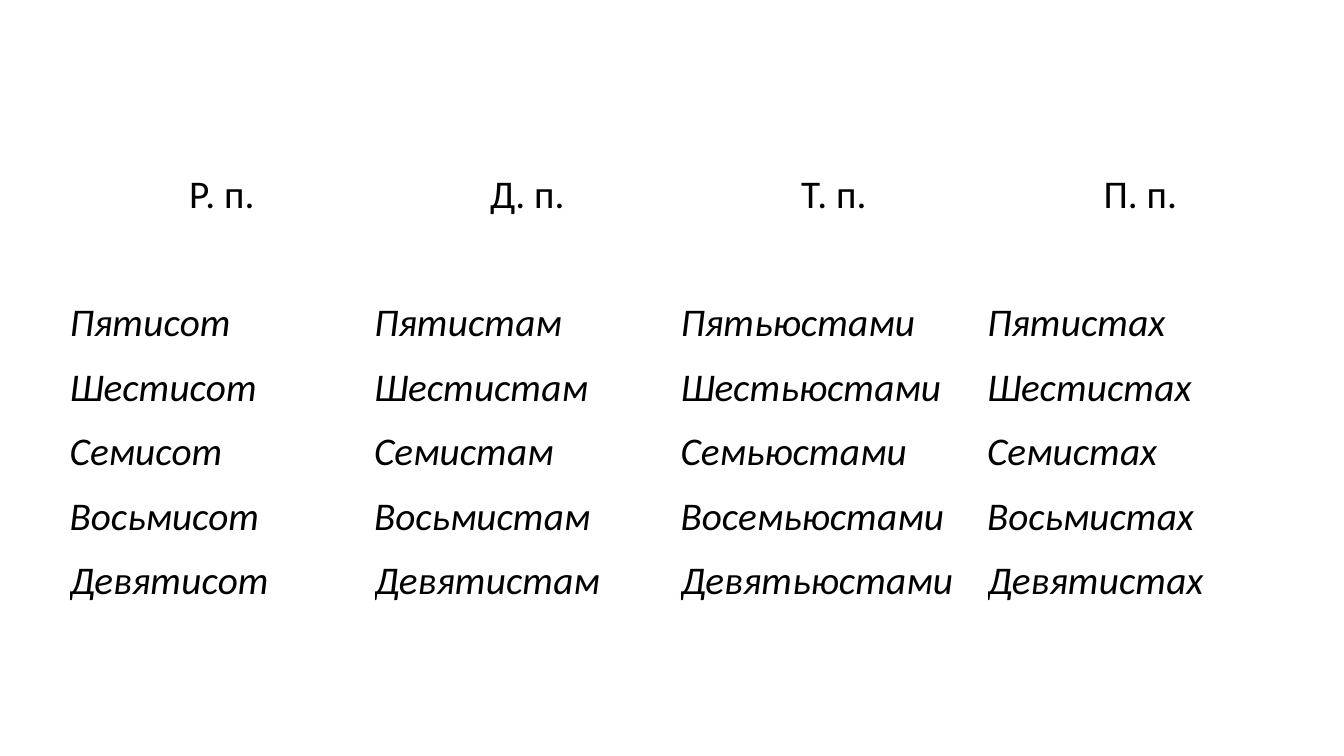
import dataclasses

import pptx
import pptx.dml.color
import pptx.enum.text
import pptx.util

Inches = pptx.util.Inches
Align = pptx.enum.text.PP_ALIGN


@dataclasses.dataclass(frozen=True)
class Theme:
    font: str = "Calibri"
    size: int = 28
    ink: str = "000000"
    paper: str = "FFFFFF"


def apply_format(target, values):
    for name, value in values.items():
        setattr(target, name, value)


class SlideBuilder:
    def __init__(self, theme, slide):
        self.theme = theme
        self.slide = slide

    def table(self, left, top, column_widths, row_heights, rows):
        frame = self.slide.shapes.add_table(
            len(rows), len(column_widths), Inches(left), Inches(top),
            Inches(sum(column_widths)), Inches(sum(row_heights)))
        table = frame.table
        apply_format(table, {"first_row": False, "horz_banding": False})
        for column, width in zip(table.columns, column_widths):
            column.width = Inches(width)
        for index, (row, height, texts) in enumerate(zip(table.rows, row_heights, rows)):
            row.height = Inches(height)
            for cell, text in zip(row.cells, texts):
                self.cell(cell, text, is_header=index == 0)

    def cell(self, cell, text, is_header):
        apply_format(cell, {
            "margin_left": 0, "margin_right": 0, "margin_top": 0, "margin_bottom": 0,
            "vertical_anchor": pptx.enum.text.MSO_ANCHOR.TOP,
        })
        cell.fill.solid()
        cell.fill.fore_color.rgb = pptx.dml.color.RGBColor.from_string(self.theme.paper)
        para = cell.text_frame.paragraphs[0]
        para.alignment = Align.CENTER if is_header else Align.LEFT
        span = para.add_run()
        span.text = text
        apply_format(span.font, {
            "name": self.theme.font, "size": pptx.util.Pt(self.theme.size),
            "bold": False, "italic": not is_header,
        })
        span.font.color.rgb = pptx.dml.color.RGBColor.from_string(self.theme.ink)


def main():
    deck = pptx.Presentation()
    apply_format(deck, {"slide_width": Inches(13.33), "slide_height": Inches(7.5)})
    blank_layout = deck.slide_layouts[6]
    builder = SlideBuilder(Theme(), deck.slides.add_slide(blank_layout))

    numeral_cases = [
        ["Р. п.", "Д. п.", "Т. п.", "П. п."],
        ["Пятисот", "Пятистам", "Пятьюстами", "Пятистах"],
        ["Шестисот", "Шестистам", "Шестьюстами", "Шестистах"],
        ["Семисот", "Семистам", "Семьюстами", "Семистах"],
        ["Восьмисот", "Восьмистам", "Восемьюстами", "Восьмистах"],
        ["Девятисот", "Девятистам", "Девятьюстами", "Девятистах"],
    ]
    builder.table(0.69, 1.7, [3.02] + [3.04] * 3, [1.27] + [0.64] * 5, numeral_cases)
    deck.save("out.pptx")


if __name__ == "__main__":
    main()
